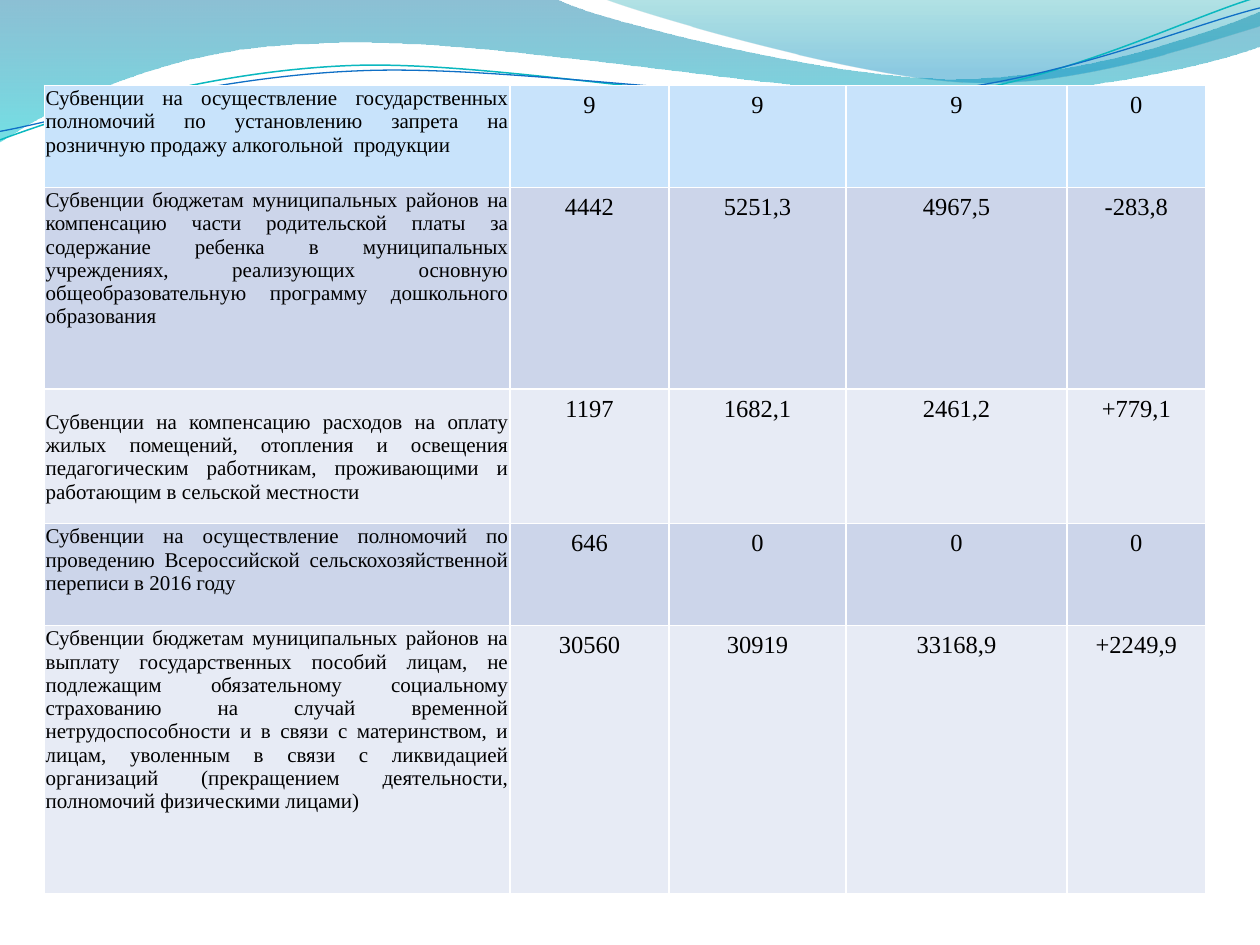
"""Build a slide with a table of budget subventions under a wave header."""
from dataclasses import dataclass

from lxml.etree import SubElement
from pptx import Presentation
from pptx.dml.color import RGBColor
from pptx.enum.text import MSO_ANCHOR, PP_ALIGN
from pptx.oxml.ns import qn
from pptx.util import Pt


@dataclass(frozen=True)
class Theme:
    font: str = "Times New Roman"
    label_size: float = 12
    value_size: float = 14
    text: str = "000000"
    header: str = "C8E3FB"
    bands: tuple = ("E7EBF5", "CCD5EA")
    back_wave: tuple = (("0074A1", 0, 45), ("00C6CF", 1, 55))
    front_wave: tuple = (("00A1A9", 0, 30), ("008BBF", 0.8, 45))
    teal_line: str = "0AB8BF"
    blue_line: str = "0F6FC6"


def draw_curve(start, segments, close):
    """Draw straight (x, y) and cubic (x1, y1, x2, y2, x, y) segments on the master."""
    points = [
        (Pt(x), Pt(y))
        for segment in segments
        for x, y in zip(segment[::2], segment[1::2])
    ]
    builder = slide.shapes.build_freeform(Pt(start[0]), Pt(start[1]), scale=1.0)
    builder.add_line_segments(points, close=close)
    shape = builder.convert_to_shape()
    shape.shadow.inherit = False
    steps = iter(list(shape.element.iter(qn("a:lnTo"))))
    for segment in segments:
        step = next(steps)
        if len(segment) == 6:
            step.tag = qn("a:cubicBezTo")
            for extra in (next(steps), next(steps)):
                step.append(extra[0])
                extra.getparent().remove(extra)
    master_tree = deck.slide_master.shapes.element
    shape.element.nvSpPr.cNvPr.set("id", str(len(master_tree) + 20))
    master_tree.append(shape.element)
    return shape


theme = Theme()
deck = Presentation()
deck.slide_width, deck.slide_height = Pt(720), Pt(540)
slide = deck.slides.add_slide(deck.slide_layouts[6])

waves = [
    (theme.back_wave, (-0.5, -0.5), [
        (317, -1), (343, 12, 478, 45, 546, 45), (614, 45, 690, 19, 720, 6.5),
        (721, 26), (708, 32, 626, 55, 537, 54), (448, 54, 275, 20, 185, 24.5),
        (93, 26, 33, 60, -1, 81.5),
    ]),
    (theme.front_wave, (345, -0.5), [
        (366, 8, 491, 45, 554, 47), (616, 50, 692, 23, 720, 15), (720, 0),
    ]),
]
for stops, start, segments in waves:
    wave = draw_curve(start, segments, True)
    wave.line.fill.background()
    wave.fill.gradient()
    wave.fill.gradient_angle = 270
    for stop, (color, position, _) in zip(wave.fill.gradient_stops, stops):
        stop.color.rgb = RGBColor.from_string(color)
        stop.position = position
    for color, (_, _, opacity) in zip(wave.element.spPr.iter(qn("a:srgbClr")), stops):
        SubElement(color, qn("a:alpha"), val=str(opacity * 1000))

strokes = [
    (theme.teal_line, 0.85, (-1.4, 63), [
        (33.7, 51.7, 114.3, 29.4, 199.9, 30), (284.9, 30.5, 425.8, 67.2, 512.5, 64.8),
        (599.2, 62.3, 676.6, 25.9, 720.1, 15.4),
    ]),
    (theme.blue_line, 0.75, (-1.1, 58.1), [
        (33.2, 53.7, 118.2, 32.6, 204.3, 33.2), (290.4, 33.2, 429.1, 63.8, 515.3, 61.4),
        (601.4, 59.4, 678.5, 30, 721.4, 21.5),
    ]),
]
for color, width, start, segments in strokes:
    stroke = draw_curve(start, segments, False)
    stroke.rotation = 357.3
    stroke.fill.background()
    stroke.line.color.rgb = RGBColor.from_string(color)
    stroke.line.width = Pt(width)

rows = [
    ("Субвенции на осуществление государственных полномочий по установлению запрета "
     "на розничную продажу алкогольной  продукции", "9", "9", "9", "0"),
    ("Субвенции бюджетам муниципальных районов на компенсацию части родительской платы "
     "за содержание ребенка в муниципальных учреждениях, реализующих основную "
     "общеобразовательную программу дошкольного образования",
     "4442", "5251,3", "4967,5", "-283,8"),
    ("Субвенции на компенсацию расходов на оплату жилых помещений, отопления и освещения "
     "педагогическим работникам, проживающими и работающим в сельской местности",
     "1197", "1682,1", "2461,2", "+779,1"),
    ("Субвенции на осуществление полномочий по проведению Всероссийской "
     "сельскохозяйственной переписи в 2016 году", "646", "0", "0", "0"),
    ("Субвенции бюджетам муниципальных районов на выплату государственных пособий лицам, "
     "не подлежащим обязательному социальному страхованию на случай временной "
     "нетрудоспособности и в связи с материнством, и лицам, уволенным в связи с "
     "ликвидацией организаций (прекращением деятельности, полномочий физическими лицами)",
     "30560", "30919", "33168,9", "+2249,9"),
]
widths = [266, 91, 101, 126.5, 79]
heights = [58.3, 115.2, 77, 58.3, 153]
table = slide.shapes.add_table(
    len(rows), len(widths), Pt(25.4), Pt(48.8), Pt(sum(widths)), Pt(sum(heights))
).table
for column, width in zip(table.columns, widths):
    column.width = Pt(width)
for row, height in zip(table.rows, heights):
    row.height = Pt(height)

for row_index, texts in enumerate(rows):
    fill_color = theme.bands[row_index % 2] if row_index else theme.header
    for column_index, text in enumerate(texts):
        is_label = column_index == 0
        cell = table.cell(row_index, column_index)
        cell.fill.solid()
        cell.fill.fore_color.rgb = RGBColor.from_string(fill_color)
        if is_label:
            cell.margin_left = cell.margin_right = cell.margin_top = Pt(0.75)
            cell.margin_bottom = Pt(0)
            if row_index == 2:
                cell.vertical_anchor = MSO_ANCHOR.MIDDLE
        para = cell.text_frame.paragraphs[0]
        para.text = text
        para.alignment = PP_ALIGN.JUSTIFY if is_label else PP_ALIGN.CENTER
        font = para.runs[0].font
        font.name = theme.font
        font.size = Pt(theme.label_size if is_label else theme.value_size)
        font.bold = False
        font.color.rgb = RGBColor.from_string(theme.text)

deck.save("out.pptx")
